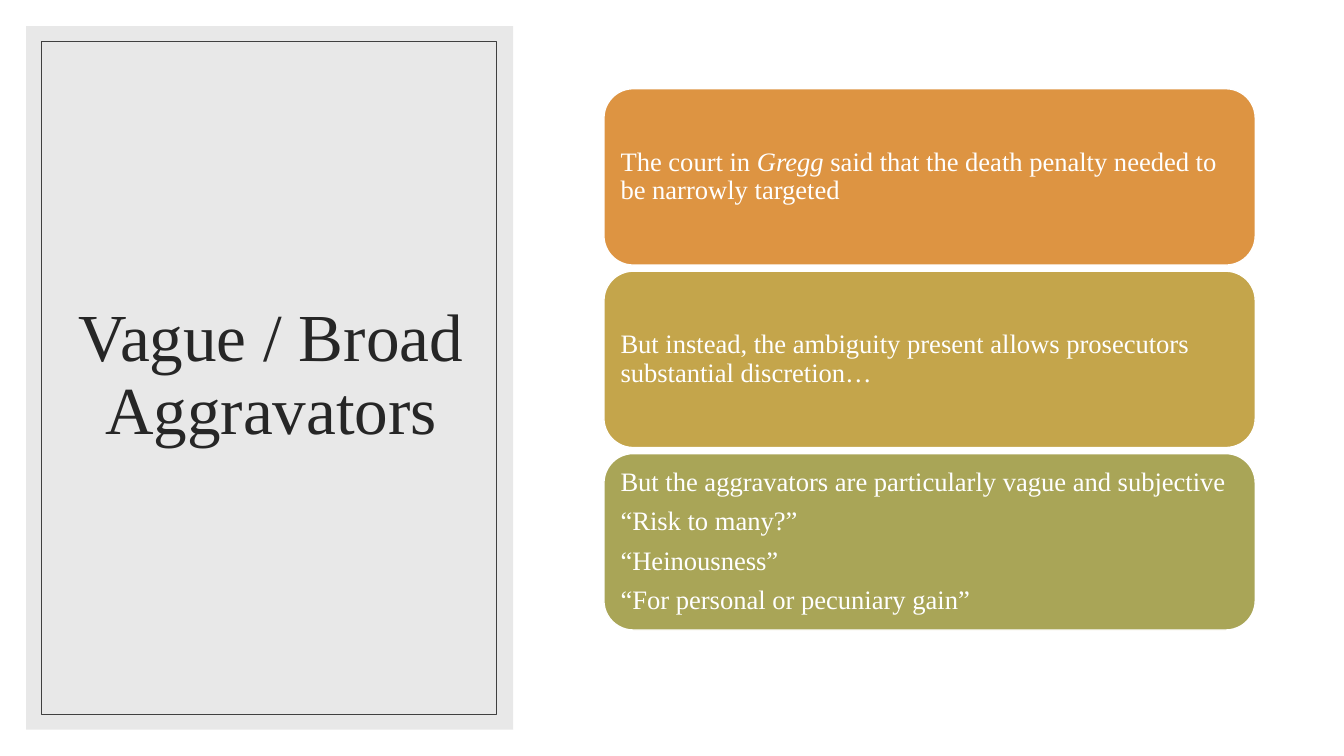
from lxml import etree
from pptx import Presentation
from pptx.dml.color import RGBColor
from pptx.enum.shapes import MSO_SHAPE
from pptx.enum.text import MSO_ANCHOR, MSO_AUTO_SIZE, PP_ALIGN
from pptx.oxml.ns import qn
from pptx.util import Emu, Pt

RECTANGLE = MSO_SHAPE.RECTANGLE
ROUNDED = MSO_SHAPE.ROUNDED_RECTANGLE
MIDDLE = MSO_ANCHOR.MIDDLE
LEFT, CENTER = PP_ALIGN.LEFT, PP_ALIGN.CENTER
NO_AUTOFIT = MSO_AUTO_SIZE.NONE
TITLE_ONLY = 5

COLORS = {
    "white": "FFFFFF",
    "panel": "D9D9D9",
    "frame": "404040",
    "title": "262626",
    "orange": "DD9442",
    "gold": "C4A54B",
    "olive": "A9A557",
}

POINTS = [
    ("orange", [[
        ("The court in ", False),
        ("Gregg ", True),
        ("said that the death penalty needed to be narrowly targeted", False),
    ]]),
    ("gold", [[("But instead, the ambiguity present allows prosecutors substantial discretion…", False)]]),
    ("olive", [
        [("But the aggravators are particularly vague and subjective", False)],
        [("“Risk to many?”", False)],
        [("“Heinousness”", False)],
        [("“For personal or pecuniary gain”", False)],
    ]),
]


def px(length):
    return Emu(length * 9144)


def color(name):
    return RGBColor.from_string(COLORS[name])


class SlideBuilder:
    font_name = "Times New Roman"
    line_spacing = 0.9

    def __init__(self, slide):
        self.slide = slide

    def background(self, fill):
        self.slide.background.fill.solid()
        self.slide.background.fill.fore_color.rgb = color(fill)

    def box(self, kind, left, top, width, height, fill=None, alpha=None, line=None, weight=1):
        box = self.slide.shapes.add_shape(kind, px(left), px(top), px(width), px(height))
        box.shadow.inherit = False
        if fill:
            box.fill.solid()
            box.fill.fore_color.rgb = color(fill)
        else:
            box.fill.background()
        if alpha is not None:
            srgb = box.fill._xPr.find(".//" + qn("a:srgbClr"))
            etree.SubElement(srgb, qn("a:alpha")).set("val", str(alpha * 1000))
        if line:
            box.line.color.rgb = color(line)
            box.line.width = Pt(weight)
        else:
            box.line.fill.background()
        return box

    def style(self, paragraph, size, text_color, align):
        paragraph.alignment = align
        paragraph.line_spacing = self.line_spacing
        paragraph.font.name = self.font_name
        paragraph.font.size = Pt(size)
        paragraph.font.color.rgb = color(text_color)

    def title(self, text, left, top, width, height):
        title = self.slide.shapes.title
        self.slide.shapes._spTree.append(title._element)
        title.left, title.top = px(left), px(top)
        title.width, title.height = px(width), px(height)
        frame = title.text_frame
        frame.text = text
        frame.word_wrap = True
        frame.auto_size = NO_AUTOFIT
        frame.vertical_anchor = MIDDLE
        self.style(frame.paragraphs[0], 48, "title", CENTER)

    def card(self, left, top, width, height, fill, paragraphs):
        card = self.box(ROUNDED, left, top, width, height, fill, line="white")
        frame = card.text_frame
        frame.word_wrap = True
        frame.vertical_anchor = MIDDLE
        frame.margin_left = frame.margin_right = px(8)
        frame.margin_top = frame.margin_bottom = px(8)
        for index, runs in enumerate(paragraphs):
            paragraph = frame.add_paragraph() if index else frame.paragraphs[0]
            self.style(paragraph, 19, "white", LEFT)
            paragraph.space_after = Pt(7.5)
            for text, italic in runs:
                run = paragraph.add_run()
                run.text = text
                if italic:
                    run.font.italic = True


def main():
    presentation = Presentation()
    presentation.slide_width, presentation.slide_height = px(1333), px(750)
    slide = presentation.slides.add_slide(presentation.slide_layouts[TITLE_ONLY])
    builder = SlideBuilder(slide)

    builder.background("white")
    builder.box(RECTANGLE, 26, 26, 483, 698, fill="panel", alpha=60)
    builder.title("Vague / Broad Aggravators", 63, 61, 412, 624)
    builder.box(RECTANGLE, 41, 41, 451, 668, line="frame", weight=0.5)

    card_top, card_height, card_gap = 88, 175, 6
    for index, (fill, paragraphs) in enumerate(POINTS):
        top = card_top + index * (card_height + card_gap)
        builder.card(599, top, 646, card_height, fill, paragraphs)

    presentation.save("out.pptx")


if __name__ == "__main__":
    main()
